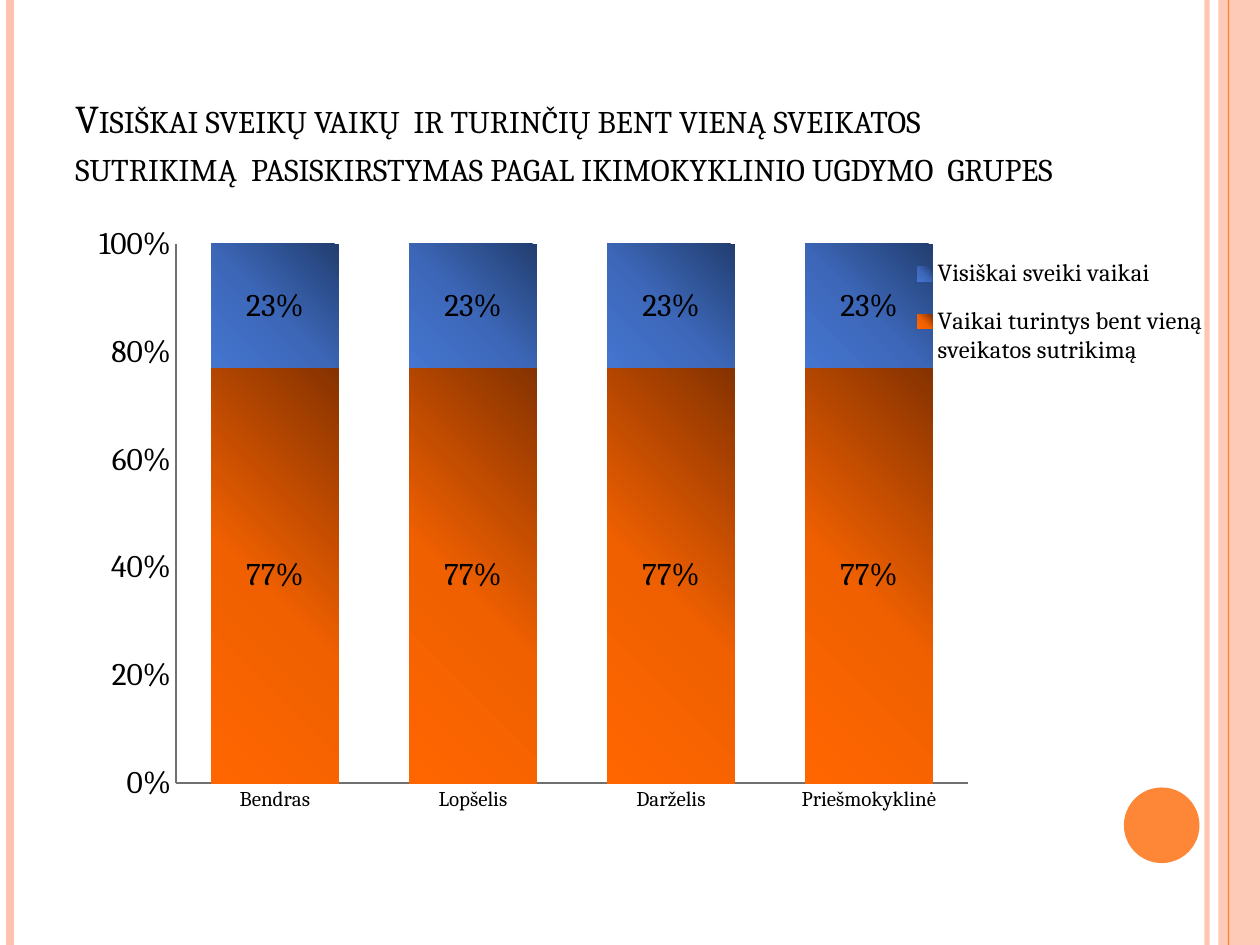
import pptx
import pptx.chart.data
import pptx.dml.color
import pptx.enum.chart
import pptx.enum.shapes
import pptx.enum.text
import pptx.oxml
import pptx.oxml.ns
import pptx.util

COLOURS = {
    "text": "000000",
    "accent": "FE8637",
    "pale": "FEC3AE",
    "axis": "707070",
}
# Gradient stops from the lower left corner outwards: (percent, colour)
GRADIENTS = {
    "impaired": [(0, "FF6600"), (45, "F06000"), (100, "853200")],
    "healthy": [(0, "4475D0"), (45, "3D68BA"), (100, "223E70")],
}
DRAWING_NS = pptx.oxml.ns.nsdecls("a")


def rgb(name):
    return pptx.dml.color.RGBColor.from_string(COLOURS[name])


def set_opacity(fill_owner, percent):
    colour = fill_owner.find(".//" + pptx.oxml.ns.qn("a:srgbClr"))
    colour.append(pptx.oxml.parse_xml(
        f'<a:alpha {DRAWING_NS} val="{percent * 1000}"/>'))


def corner_gradient(stops):
    """Return a round gradient that starts in the lower left corner."""
    stop_xml = "".join(
        f'<a:gs pos="{percent * 1000}"><a:srgbClr val="{colour}"/></a:gs>'
        for percent, colour in stops)
    return pptx.oxml.parse_xml(
        f'<a:gradFill {DRAWING_NS} rotWithShape="1"><a:gsLst>{stop_xml}</a:gsLst>'
        '<a:path path="circle"><a:fillToRect t="100000" r="100000"/></a:path>'
        '</a:gradFill>')


def place(element, x, y, w, h):
    """Set a manual layout, in shares of the chart, on a plot area or legend."""
    target = ('<c:layoutTarget val="inner"/>'
              if element.tag.endswith("plotArea") else "")
    layout = pptx.oxml.parse_xml(
        f'<c:layout {pptx.oxml.ns.nsdecls("c")}><c:manualLayout>{target}'
        '<c:xMode val="edge"/><c:yMode val="edge"/>'
        f'<c:x val="{x}"/><c:y val="{y}"/><c:w val="{w}"/><c:h val="{h}"/>'
        '</c:manualLayout></c:layout>')
    previous = element.find(pptx.oxml.ns.qn("c:layout"))
    if previous is not None:
        element.remove(previous)
    position = element.find(pptx.oxml.ns.qn("c:legendPos"))
    if position is not None:
        position.addnext(layout)
    else:
        element.insert(0, layout)


class SlideBuilder:
    """Holds the style and the slide; lengths are inches on a 10 x 7.5 grid."""

    font = "Cambria"
    columns, rows = 10, 7.5

    def __init__(self, presentation):
        self.width = presentation.slide_width
        self.height = presentation.slide_height
        self.slide = presentation.slides.add_slide(presentation.slide_layouts[6])

    def x(self, column):
        return round(self.width * column / self.columns)

    def y(self, row):
        return round(self.height * row / self.rows)

    def box(self, left, top, width, height):
        return self.x(left), self.y(top), self.x(width), self.y(height)

    def rule(self, column, colour, weight, opacity=100):
        """Draw a vertical line over the full height of the slide."""
        line = self.slide.shapes.add_connector(
            pptx.enum.shapes.MSO_CONNECTOR.STRAIGHT,
            self.x(column), 0, self.x(column), self.height)
        line.line.color.rgb = rgb(colour)
        line.line.width = pptx.util.Pt(weight)
        properties = line._element.spPr
        if opacity < 100:
            set_opacity(properties, opacity)
        properties.append(pptx.oxml.parse_xml(f"<a:effectLst {DRAWING_NS}/>"))

    def shape(self, kind, bounds, colour, opacity=100):
        shape = self.slide.shapes.add_shape(kind, *self.box(*bounds))
        shape.shadow.inherit = False
        shape.fill.solid()
        shape.fill.fore_color.rgb = rgb(colour)
        shape.line.fill.background()
        if opacity < 100:
            set_opacity(shape._element.spPr, opacity)

    def title(self, bounds, text, size):
        frame = self.slide.shapes.add_textbox(*self.box(*bounds)).text_frame
        frame.word_wrap = True
        frame.vertical_anchor = pptx.enum.text.MSO_ANCHOR.BOTTOM
        paragraph = frame.paragraphs[0]
        run = paragraph.add_run()
        run.text = text
        self.style(paragraph.font, size)
        run._r.get_or_add_rPr().set("cap", "small")

    def style(self, font, size):
        font.name = self.font
        font.size = pptx.util.Pt(size)
        font.color.rgb = rgb("text")

    def stacked_chart(self, bounds, categories, series):
        """Add a 100 % stacked column chart; series are (name, values, gradient)."""
        data = pptx.chart.data.CategoryChartData(number_format="0%")
        data.categories = categories
        for name, values, _ in series:
            data.add_series(name, values)
        chart = self.slide.shapes.add_chart(
            pptx.enum.chart.XL_CHART_TYPE.COLUMN_STACKED_100,
            *self.box(*bounds), data).chart
        self.style(chart.font, 18)
        chart.has_title = False

        plot = chart.plots[0]
        plot.gap_width, plot.overlap = 55, 100
        plot.vary_by_categories = False
        plot.has_data_labels = True
        labels = plot.data_labels
        labels.show_value = True
        labels.number_format = "0%"
        labels.number_format_is_linked = False
        self.style(labels.font, 18)
        for bars, (_, _, gradient) in zip(plot.series, series):
            bars._element.get_or_add_spPr().insert(
                0, corner_gradient(GRADIENTS[gradient]))

        for axis, size in ((chart.category_axis, 12), (chart.value_axis, 18)):
            axis.has_major_gridlines = False
            axis.major_tick_mark = pptx.enum.chart.XL_TICK_MARK.NONE
            axis.minor_tick_mark = pptx.enum.chart.XL_TICK_MARK.NONE
            axis.format.line.color.rgb = rgb("axis")
            self.style(axis.tick_labels.font, size)
        scale = chart.value_axis
        scale.minimum_scale, scale.maximum_scale, scale.major_unit = 0, 1, 0.2
        scale.tick_labels.number_format = "0%"
        scale.tick_labels.number_format_is_linked = False

        chart.has_legend = True
        chart.legend.position = pptx.enum.chart.XL_LEGEND_POSITION.RIGHT
        chart.legend.include_in_layout = False
        self.style(chart.legend.font, 14)
        place(chart._chartSpace.chart.plotArea, 0.098, 0.075, 0.687, 0.831)
        place(chart.legend._element, 0.73, 0.07, 0.27, 0.22)


def main():
    presentation = pptx.Presentation()
    presentation.slide_width = pptx.util.Inches(10)
    presentation.slide_height = pptx.util.Inches(7.5)
    builder = SlideBuilder(presentation)
    shapes = pptx.enum.shapes.MSO_SHAPE

    builder.rule(9.58, "pale", 3, opacity=93)
    builder.rule(0.08, "pale", 4.5)
    builder.rule(9.75, "accent", 1.5)
    builder.shape(shapes.RECTANGLE, (9.67, 0, 0.33, 7.5), "pale", opacity=87)
    builder.rule(9.75, "accent", 0.75)
    builder.shape(shapes.OVAL, (8.92, 6.25, 0.6, 0.6), "accent")

    builder.title(
        (0.5, 0.3, 8.17, 1.25),
        "Visiškai sveikų vaikų  ir turinčių bent vieną sveikatos sutrikimą  "
        "pasiskirstymas pagal ikimokyklinio ugdymo  grupes", 22.5)

    groups = ["Bendras", "Lopšelis", "Darželis", "Priešmokyklinė"]
    builder.stacked_chart((0.5, 1.55, 9.15, 5.15), groups, [
        ("Vaikai turintys bent vieną sveikatos sutrikimą",
         [0.77] * len(groups), "impaired"),
        ("Visiškai sveiki vaikai", [0.23] * len(groups), "healthy"),
    ])
    presentation.save("out.pptx")


if __name__ == "__main__":
    main()
